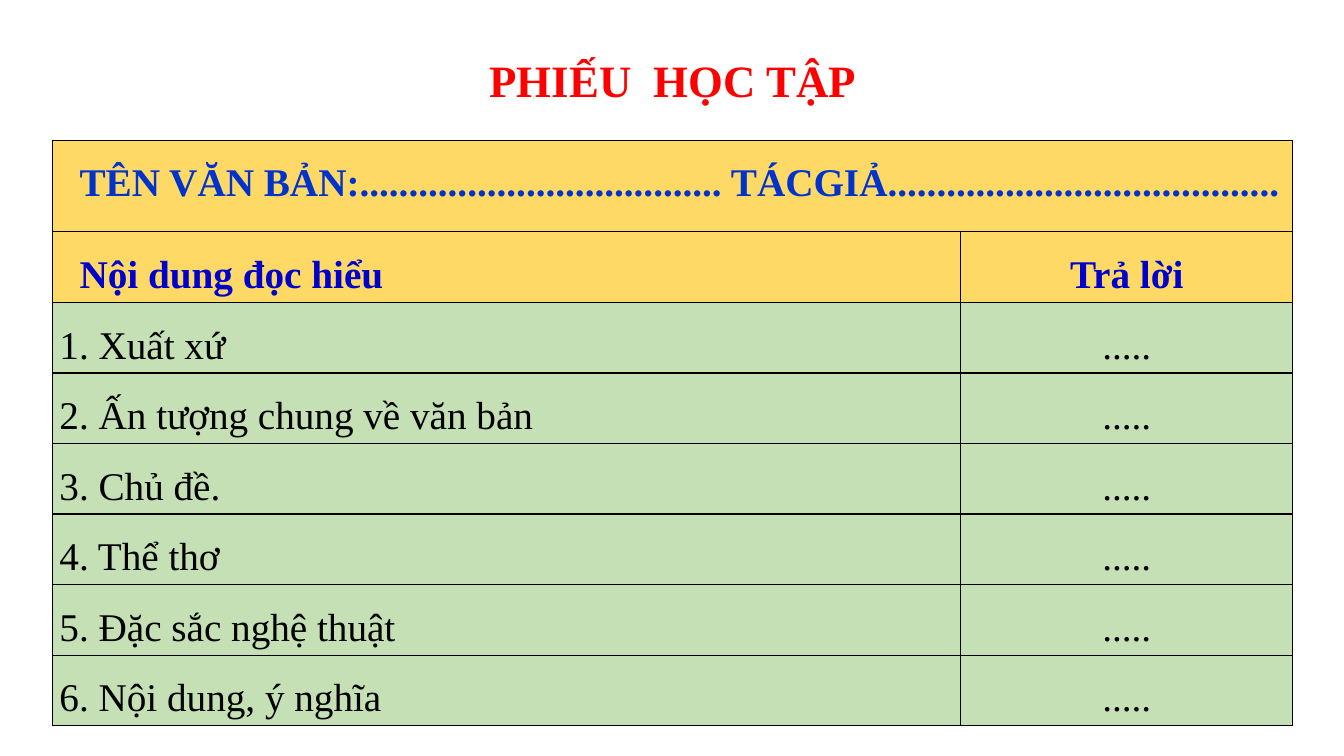
from lxml import etree
from pptx import Presentation
from pptx.dml.color import RGBColor
from pptx.enum import text
from pptx.oxml import ns
from pptx.util import Inches, Pt

FONT = "Times New Roman"
COLORS = {
    "title": "FF0000",
    "name_line": "0033CC",
    "heading": "0000CC",
    "body": "000000",
    "border": "000000",
    "header_fill": "FFD966",
    "body_fill": "C5E0B4",
}
NAME_LINE = "TÊN VĂN BẢN:" + "." * 37 + " TÁCGIẢ" + "." * 40
HEADINGS = ["Nội dung đọc hiểu", "Trả lời"]
TOPICS = [
    "1. Xuất xứ",
    "2. Ấn tượng chung về văn bản",
    "3. Chủ đề.",
    "4. Thể thơ",
    "5. Đặc sắc nghệ thuật",
    "6. Nội dung, ý nghĩa",
]
ANSWER = "....."
MARGIN = 0.07
HEADER_MARGIN = 0.27
COLUMN_WIDTHS = [9.01, 3.29]
NAME_ROW_HEIGHT = 0.91
ROW_HEIGHT = 0.7


def color(name):
    return RGBColor.from_string(COLORS[name])


def format_paragraph(paragraph, size, color_name, bold, alignment):
    paragraph.alignment = alignment
    font = paragraph.font
    font.name = FONT
    font.size = Pt(size)
    font.bold = bold
    font.color.rgb = color(color_name)


def add_title(slide, words):
    title = slide.shapes.title
    title.left, title.top = Inches(4.74), Inches(0.47)
    title.width, title.height = Inches(3.87), Inches(0.64)
    frame = title.text_frame
    frame.text = words
    frame.word_wrap = False
    frame.auto_size = text.MSO_AUTO_SIZE.NONE
    frame.vertical_anchor = text.MSO_ANCHOR.MIDDLE
    format_paragraph(frame.paragraphs[0], 32, "title", True, text.PP_ALIGN.CENTER)


def add_borders(cell):
    properties = cell._tc.get_or_add_tcPr()
    for side in ("a:lnL", "a:lnR", "a:lnT", "a:lnB"):
        line = etree.SubElement(properties, ns.qn(side), w=str(Pt(1)))
        fill = etree.SubElement(line, ns.qn("a:solidFill"))
        etree.SubElement(fill, ns.qn("a:srgbClr"), val=COLORS["border"])


def fill_cell(cell, words, color_name, fill_name, bold, alignment, left=MARGIN):
    cell.text = words
    cell.margin_left, cell.margin_right = Inches(left), Inches(MARGIN)
    cell.margin_top = cell.margin_bottom = 0
    cell.fill.solid()
    cell.fill.fore_color.rgb = color(fill_name)
    paragraph = cell.text_frame.paragraphs[0]
    paragraph.line_spacing = 1.5
    format_paragraph(paragraph, 28, color_name, bold, alignment)


def add_worksheet_table(slide):
    row_count = len(TOPICS) + 2
    height = NAME_ROW_HEIGHT + ROW_HEIGHT * (row_count - 1)
    frame = slide.shapes.add_table(
        row_count, len(COLUMN_WIDTHS), Inches(0.52), Inches(1.39),
        Inches(sum(COLUMN_WIDTHS)), Inches(height))
    table = frame.table
    table.first_row = table.horz_banding = False
    for column, width in zip(table.columns, COLUMN_WIDTHS):
        column.width = Inches(width)
    for row in table.rows:
        row.height = Inches(ROW_HEIGHT)
    table.rows[0].height = Inches(NAME_ROW_HEIGHT)
    for cell in table.iter_cells():
        add_borders(cell)

    # Header rows
    align = text.PP_ALIGN
    table.cell(0, 0).merge(table.cell(0, 1))
    fill_cell(table.cell(0, 0), NAME_LINE, "name_line", "header_fill", True,
              align.LEFT, HEADER_MARGIN)
    fill_cell(table.cell(1, 0), HEADINGS[0], "heading", "header_fill", True,
              align.LEFT, HEADER_MARGIN)
    fill_cell(table.cell(1, 1), HEADINGS[1], "heading", "header_fill", True,
              align.CENTER)

    # Topics and answers
    for row, topic in enumerate(TOPICS, start=2):
        fill_cell(table.cell(row, 0), topic, "body", "body_fill", False, align.JUSTIFY)
        fill_cell(table.cell(row, 1), ANSWER, "body", "body_fill", False, align.CENTER)


def main():
    presentation = Presentation()
    presentation.slide_width = Inches(13.33)
    presentation.slide_height = Inches(7.5)
    slide = presentation.slides.add_slide(presentation.slide_layouts[5])
    add_title(slide, "PHIẾU  HỌC TẬP")
    add_worksheet_table(slide)
    presentation.save("out.pptx")


if __name__ == "__main__":
    main()
